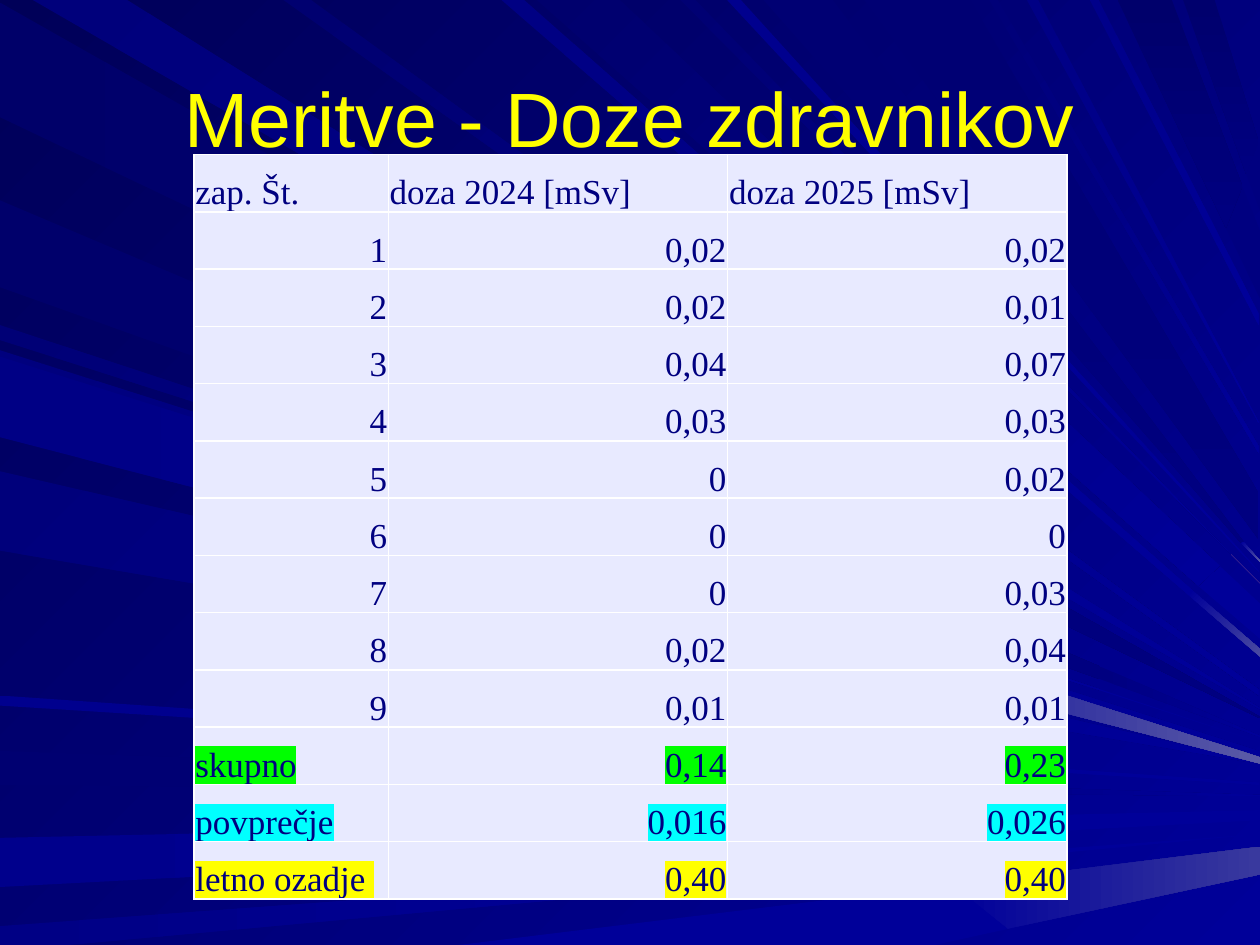
from dataclasses import dataclass

from lxml import etree
from pptx import Presentation
from pptx import util as u
from pptx.dml import color
from pptx.enum import text
from pptx.oxml import ns

Pt = u.Pt


@dataclass(frozen=True)
class Theme:
    back: tuple = ("000058", "000099", 45)
    title: str = "FFFF00"
    ink: str = "000080"
    cell: str = "E8EAFF"
    rule: str = "FFFFFF"
    head: str = "Arial"
    body: str = "Times New Roman"
    big: int = 44
    small: int = 20


THEME = Theme()
UNIT = 0.72  # one ray step, a hundredth of an inch, in points

# Each ray: first colour, last colour (None for a plain fill), angle, corners
RAYS = [
    ("000069", "000080", 0, "556,317 0,2 0,93 529,345 1000,570 1000,569"),
    ("00007B", "000099", 45, "577,298 101,0 26,0 563,310 1000,563 1000,562"),
    ("000071", "000080", 0, "0,623 701,629 701,621 0,596"),
    ("000080", "000099", 0, "1000,632 1000,631 701,621 701,629"),
    ("00008C", "000099", 0, "0,704 831,660 831,647 0,665"),
    ("000099", None, 0, "1000,651 1000,643 831,647 831,660"),
    ("000099", None, 0, "1000,662 628,689 628,697"),
    ("000085", "000099", 0, "0,750 54,750 628,697 628,689 0,735"),
    ("000099", None, 0, "742,750 801,737 756,702 364,750"),
    ("000099", "39399E", 0, "1000,694 1000,672 756,702 800,737"),
    ("000099", None, 0, "1000,589 873,547 873,548"),
    ("000076", "000099", 45, "0,270 873,548 873,547 0,258"),
    ("000080", "000099", 0, "1000,585 1000,584 873,529 873,539"),
    ("00006B", "000080", 0, "0,228 873,539 873,529 0,159"),
    ("000083", "000099", 45, "398,0 944,473 947,469 416,0"),
    ("000099", "4A4AA1", 45, "1000,521 1000,515 947,469 944,473"),
    ("000099", None, 0, "1000,507 1000,479 968,449 951,465"),
    ("00006D", "000099", 45, "426,0 951,465 968,449 492,0"),
    ("FF9999", None, 0, "1000,463 977,440 1000,463"),
    ("000073", "000099", 45, "540,0 977,440 977,440 552,0"),
    ("000073", "000080", 90, "606,0 985,431 987,430 661,0"),
    ("000099", "5A5AA6", 45, "1000,446 1000,445 987,430 985,431"),
    ("000080", None, 0, "1000,237 1000,183 986,148 973,181"),
    ("00006B", "000080", 90, "887,0 973,181 986,148 930,0"),
    ("00006D", "000080", 90, "964,0 939,0 989,138 999,113"),
    ("000080", None, 0, "989,138 1000,167 1000,114 999,113"),
    ("00007E", "000099", 45, "0,342 999,602 999,596 0,278"),
    ("00007B", "000099", 45, "0,437 999,606 999,605 0,374"),
    ("00008E", "000099", 0, "0,560 999,623 999,621 0,552"),
    ("000070", "000099", 45, "225,0 999,552 999,547 247,0"),
    ("00008E", "000099", 45, "577,0 999,454 999,453 588,0"),
    ("000073", "000080", 90, "770,0 686,0 999,428 999,390 998,390"),
    ("000078", "000099", 45, "785,0 999,360 999,354 792,0"),
    ("000085", "000099", 45, "815,0 999,336 999,335 824,0"),
    ("00008A", "000099", 45, "999,249 872,0 865,0 999,258"),
    ("000085", "000099", 0, "0,283 0,347 633,511 635,498 637,485"),
    ("000099", "5A5AA6", 0, "1000,601 637,485 635,498 633,511 1000,606"),
]

# Each row: its three texts and its highlight, if any
ROWS = [
    ("zap. Št.", "doza 2024 [mSv]", "doza 2025 [mSv]", None),
    ("1", "0,02", "0,02", None),
    ("2", "0,02", "0,01", None),
    ("3", "0,04", "0,07", None),
    ("4", "0,03", "0,03", None),
    ("5", "0", "0,02", None),
    ("6", "0", "0", None),
    ("7", "0", "0,03", None),
    ("8", "0,02", "0,04", None),
    ("9", "0,01", "0,01", None),
    ("skupno", "0,14", "0,23", "00FF00"),
    ("povprečje", "0,016", "0,026", "00FFFF"),
    ("letno ozadje ", "0,40", "0,40", "FFFF00"),
]


def rgb(code):
    return color.RGBColor.from_string(code)


def put(item, **vals):
    """Set each named attribute of the item."""
    for key, val in vals.items():
        setattr(item, key, val)


def paint(fill, first, last=None, angle=0):
    """Fill with one colour, or with a gradient turned clockwise."""
    if last is None:
        fill.solid()
        fill.fore_color.rgb = rgb(first)
        return
    fill.gradient()
    fill.gradient_angle = 360 - angle
    for stop, code in zip(fill.gradient_stops, (first, last)):
        stop.color.rgb = rgb(code)


def write(para, words, face, size, code, **vals):
    run = para.add_run()
    run.text = words
    put(para, **vals)
    put(run.font, size=Pt(size), name=face)
    run.font.color.rgb = rgb(code)
    return run


def add_rays(slide, box):
    """Draw the fan of light behind everything else."""
    left, top = box
    group = slide.shapes.add_group_shape()
    for first, last, angle, trail in RAYS:
        start, *rest = [tuple(map(int, p.split(","))) for p in trail.split()]
        pen = group.shapes.build_freeform(*start, scale=Pt(UNIT))
        pen.add_line_segments(rest, close=True)
        ray = pen.convert_to_shape(Pt(left), Pt(top))
        paint(ray.fill, first, last, angle)
        ray.line.fill.background()
        ray.shadow.inherit = False
    slide.shapes.title._element.addprevious(group._element)


def add_title(slide, box, words):
    title = slide.shapes.title
    put(title, **dict(zip(("left", "top", "width", "height"), map(Pt, box))))
    frame = title.text_frame
    put(frame, word_wrap=True, auto_size=text.MSO_AUTO_SIZE.NONE,
        vertical_anchor=text.MSO_ANCHOR.MIDDLE)
    write(frame.paragraphs[0], words, THEME.head, THEME.big, THEME.title,
          alignment=text.PP_ALIGN.CENTER)


def edge(cell):
    """Rule all four sides of a cell."""
    props = cell._tc.get_or_add_tcPr()
    for spot, side in enumerate(("lnL", "lnR", "lnT", "lnB")):
        line = etree.Element(ns.qn(f"a:{side}"), w=str(Pt(1)))
        fill = etree.SubElement(line, ns.qn("a:solidFill"))
        etree.SubElement(fill, ns.qn("a:srgbClr"), val=THEME.rule)
        props.insert(spot, line)


def mark(run, code):
    """Highlight a run; the element follows the text fill."""
    light = etree.Element(ns.qn("a:highlight"))
    etree.SubElement(light, ns.qn("a:srgbClr"), val=code)
    run.font._element.find(ns.qn("a:solidFill")).addnext(light)


def add_doses(slide, box, shares):
    left, top, width, height = map(Pt, box)
    table = slide.shapes.add_table(len(ROWS), len(shares), left, top,
                                   width, height).table
    put(table, first_row=False, horz_banding=False)
    for col, share in zip(table.columns, shares):
        col.width = int(width * share / sum(shares))
    for row, (*words, light) in zip(table.rows, ROWS):
        row.height = height // len(ROWS)
        for cell, word in zip(row.cells, words):
            put(cell, vertical_anchor=text.MSO_ANCHOR.BOTTOM,
                margin_left=Pt(0.75), margin_right=Pt(0.75),
                margin_top=Pt(0.75), margin_bottom=0)
            paint(cell.fill, THEME.cell)
            edge(cell)
            # Numbers sit right, words sit left
            side = "RIGHT" if word[0].isdigit() else "LEFT"
            run = write(cell.text_frame.paragraphs[0], word, THEME.body,
                        THEME.small, THEME.ink, line_spacing=0.9,
                        alignment=text.PP_ALIGN[side])
            if light:
                mark(run, light)


def main():
    deck = Presentation()
    put(deck, slide_width=Pt(720), slide_height=Pt(540))
    slide = deck.slides.add_slide(deck.slide_layouts[5])
    paint(slide.background.fill, *THEME.back)
    add_rays(slide, (0, 0))
    add_title(slide, (36, 21.6, 648, 90), "Meritve - Doze zdravnikov")
    add_doses(slide, (110.9, 88.4, 499, 425.5), (111, 194, 194))
    deck.save("out.pptx")


if __name__ == "__main__":
    main()
